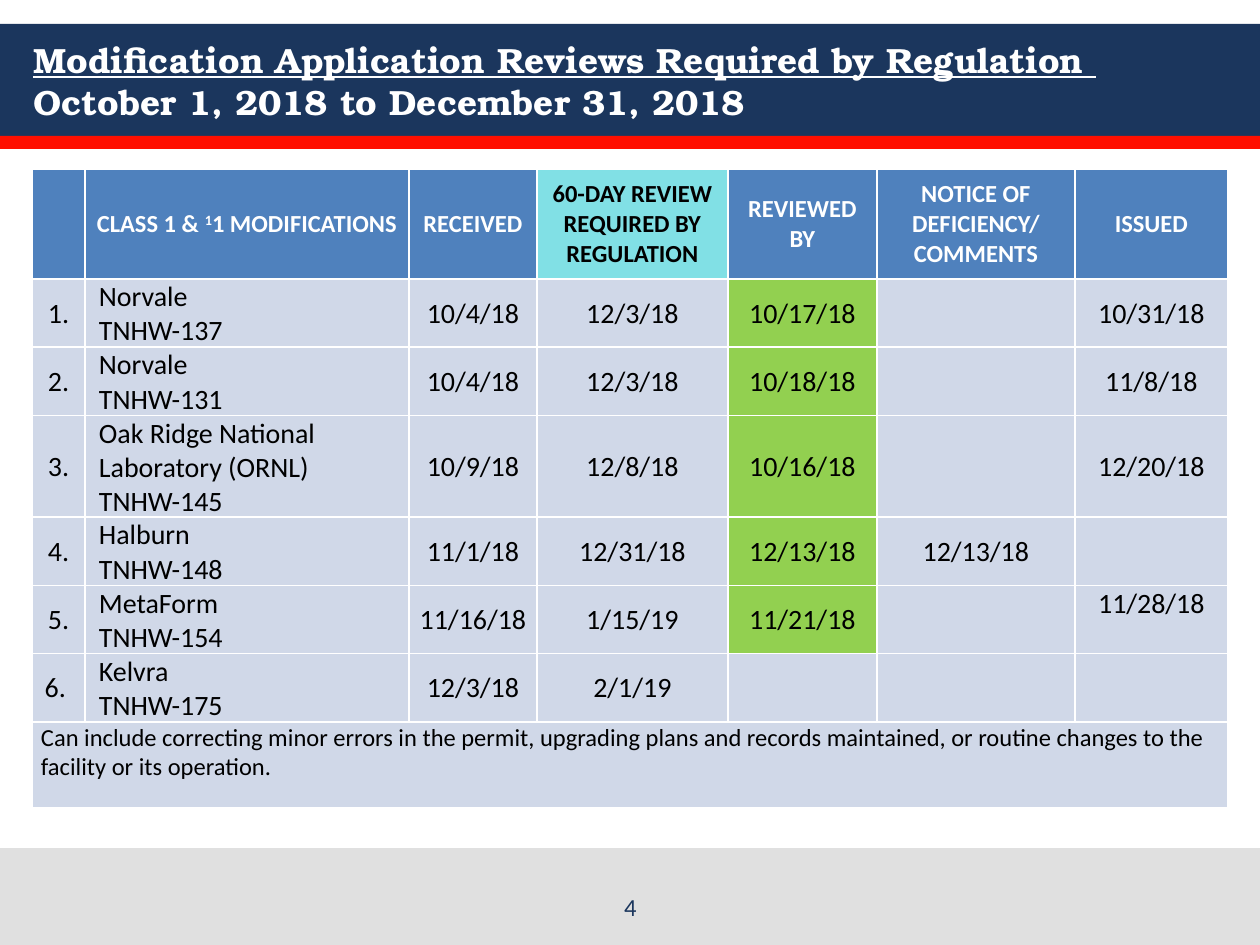
from lxml.etree import SubElement
from pptx import Presentation
from pptx.dml.color import RGBColor
from pptx.enum.shapes import MSO_SHAPE
from pptx.enum.text import MSO_ANCHOR, PP_ALIGN
from pptx.oxml.ns import qn
from pptx.util import Emu, Pt

NAVY = RGBColor(0x1B, 0x36, 0x5D)
RED = RGBColor(0xFF, 0x0F, 0x00)
GREY = RGBColor(0xE0, 0xE0, 0xE0)
WHITE = RGBColor(0xFF, 0xFF, 0xFF)
BLACK = RGBColor(0x00, 0x00, 0x00)
BLUE = RGBColor(0x4F, 0x81, 0xBD)
AQUA = RGBColor(0x81, 0xE0, 0xE5)
PALE = RGBColor(0xD0, 0xD8, 0xE8)
GREEN = RGBColor(0x92, 0xD0, 0x50)

BODY_FONT = "Calibri"
TITLE_FONT = "TeX Gyre Bonum"

BANDS = [(24, 112, NAVY), (136, 13, RED), (848, 97, GREY)]
TITLE = "Modification Application Reviews Required by Regulation "
PERIOD = "October 1, 2018 to December 31, 2018"
PAGE = "4"

HEADINGS = [
    [],
    [["CLASS 1 & ", "^1", "1 MODIFICATIONS"]],
    [["RECEIVED"]],
    [["60-DAY REVIEW"], ["REQUIRED BY"], ["REGULATION"]],
    [["REVIEWED BY"]],
    [["NOTICE OF DEFICIENCY/ COMMENTS"]],
    [["ISSUED"]],
]
REVIEWS = [
    ("1.", "Norvale\nTNHW-137", "10/4/18", "12/3/18", "10/17/18", "", "10/31/18"),
    ("2.", "Norvale\nTNHW-131", "10/4/18", "12/3/18", "10/18/18", "", "11/8/18"),
    ("3.", "Oak Ridge National\nLaboratory (ORNL)\nTNHW-145",
     "10/9/18", "12/8/18", "10/16/18", "", "12/20/18"),
    ("4.", "Halburn\nTNHW-148", "11/1/18", "12/31/18", "12/13/18", "12/13/18", ""),
    ("5.", "MetaForm\nTNHW-154", "11/16/18", "1/15/19", "11/21/18", "", "11/28/18"),
    ("6. ", "Kelvra\nTNHW-175", "12/3/18", "2/1/19", "", "", ""),
]
FOOTNOTE = ("Can include correcting minor errors in the permit, upgrading plans and records "
            "maintained, or routine changes to the facility or its operation.")

COLUMN_WIDTHS = [53, 324, 128, 191, 149, 198, 153]
ROW_HEIGHTS = [111, 64, 64, 96, 64, 64, 57, 86]
FACILITY, DEADLINE, REVIEWED = 1, 3, 4
TOP_ALIGNED = (5, 6)


def px(length):
    return Emu(round(length * 914400 / 126))


def add_run(paragraph, text, size, color, font=BODY_FONT, bold=False, underline=False):
    run = paragraph.add_run()
    run.text = text.lstrip("^")
    run.font.size = Pt(size)
    run.font.name = font
    run.font.bold = bold
    run.font.underline = underline
    run.font.color.rgb = color
    if text.startswith("^"):
        run._r.get_or_add_rPr().set("baseline", "30000")


def add_box(slide, left, top, width, height, anchor):
    frame = slide.shapes.add_textbox(px(left), px(top), px(width), px(height)).text_frame
    frame.word_wrap = True
    frame.vertical_anchor = anchor
    return frame.paragraphs[0]


def add_border(cell, side, points):
    line = SubElement(cell._tc.get_or_add_tcPr(), qn(f"a:ln{side}"), w=str(Pt(points)))
    fill = SubElement(line, qn("a:solidFill"))
    SubElement(fill, qn("a:srgbClr"), val=str(WHITE))


def style_cell(cell, fill, top_border=1):
    for side in "LRTB":
        add_border(cell, side, top_border if side == "T" else 1)
    cell.fill.solid()
    cell.fill.fore_color.rgb = fill


def fill_cell(cell, lines, size, color, bold=False, align=PP_ALIGN.CENTER,
              anchor=MSO_ANCHOR.MIDDLE, left=9, right=9):
    cell.vertical_anchor = anchor
    cell.margin_left, cell.margin_right = px(left), px(right)
    cell.margin_top, cell.margin_bottom = px(1), px(0)
    frame = cell.text_frame
    for index, runs in enumerate(lines):
        paragraph = frame.add_paragraph() if index else frame.paragraphs[0]
        paragraph.alignment = align
        for text in runs:
            add_run(paragraph, text, size, color, bold=bold)


def add_reviews(slide):
    frame = slide.shapes.add_table(len(ROW_HEIGHTS), len(COLUMN_WIDTHS), px(32), px(168),
                                   px(sum(COLUMN_WIDTHS)), px(sum(ROW_HEIGHTS)))
    table = frame.table
    table.first_row = table.horz_banding = False
    for column, width in zip(table.columns, COLUMN_WIDTHS):
        column.width = px(width)
    for row, height in zip(table.rows, ROW_HEIGHTS):
        row.height = px(height)

    for c, lines in enumerate(HEADINGS):
        cell = table.cell(0, c)
        style_cell(cell, AQUA if c == DEADLINE else BLUE, top_border=3)
        fill_cell(cell, lines, 14, BLACK if c == DEADLINE else WHITE, bold=True)

    for r, review in enumerate(REVIEWS, 1):
        for c, text in enumerate(review):
            cell = table.cell(r, c)
            style_cell(cell, GREEN if c == REVIEWED and text else PALE)
            lines = [[line] for line in text.split("\n") if line]
            if c == FACILITY:
                fill_cell(cell, lines, 16, BLACK, align=PP_ALIGN.LEFT, left=14, right=1)
            else:
                anchor = MSO_ANCHOR.TOP if (r, c) == TOP_ALIGNED else MSO_ANCHOR.MIDDLE
                margin = 9 if c == 0 else 1
                fill_cell(cell, lines, 16, BLACK, anchor=anchor, left=margin, right=margin)

    last = len(ROW_HEIGHTS) - 1
    for cell in table.rows[last].cells:
        style_cell(cell, PALE)
    note = table.cell(last, 0)
    note.merge(table.cell(last, len(COLUMN_WIDTHS) - 1))
    fill_cell(note, [[FOOTNOTE]], 14, BLACK, align=PP_ALIGN.LEFT, anchor=MSO_ANCHOR.TOP)


def main():
    """Build the modification review slide."""
    deck = Presentation()
    deck.slide_width, deck.slide_height = px(1260), px(945)
    slide = deck.slides.add_slide(deck.slide_layouts[6])

    for top, height, color in BANDS:
        band = slide.shapes.add_shape(MSO_SHAPE.RECTANGLE, 0, px(top), px(1260), px(height))
        band.shadow.inherit = False
        band.fill.solid()
        band.fill.fore_color.rgb = color
        band.line.fill.background()

    title = add_box(slide, 21, 24, 1218, 113, MSO_ANCHOR.MIDDLE)
    add_run(title, TITLE, 20, WHITE, TITLE_FONT, bold=True, underline=True)
    title.add_line_break()
    add_run(title, PERIOD, 20, WHITE, TITLE_FONT, bold=True)

    add_reviews(slide)

    page = add_box(slide, 431, 878, 399, 50, MSO_ANCHOR.BOTTOM)
    page.alignment = PP_ALIGN.CENTER
    add_run(page, PAGE, 14, NAVY)

    deck.save("out.pptx")


if __name__ == "__main__":
    main()
